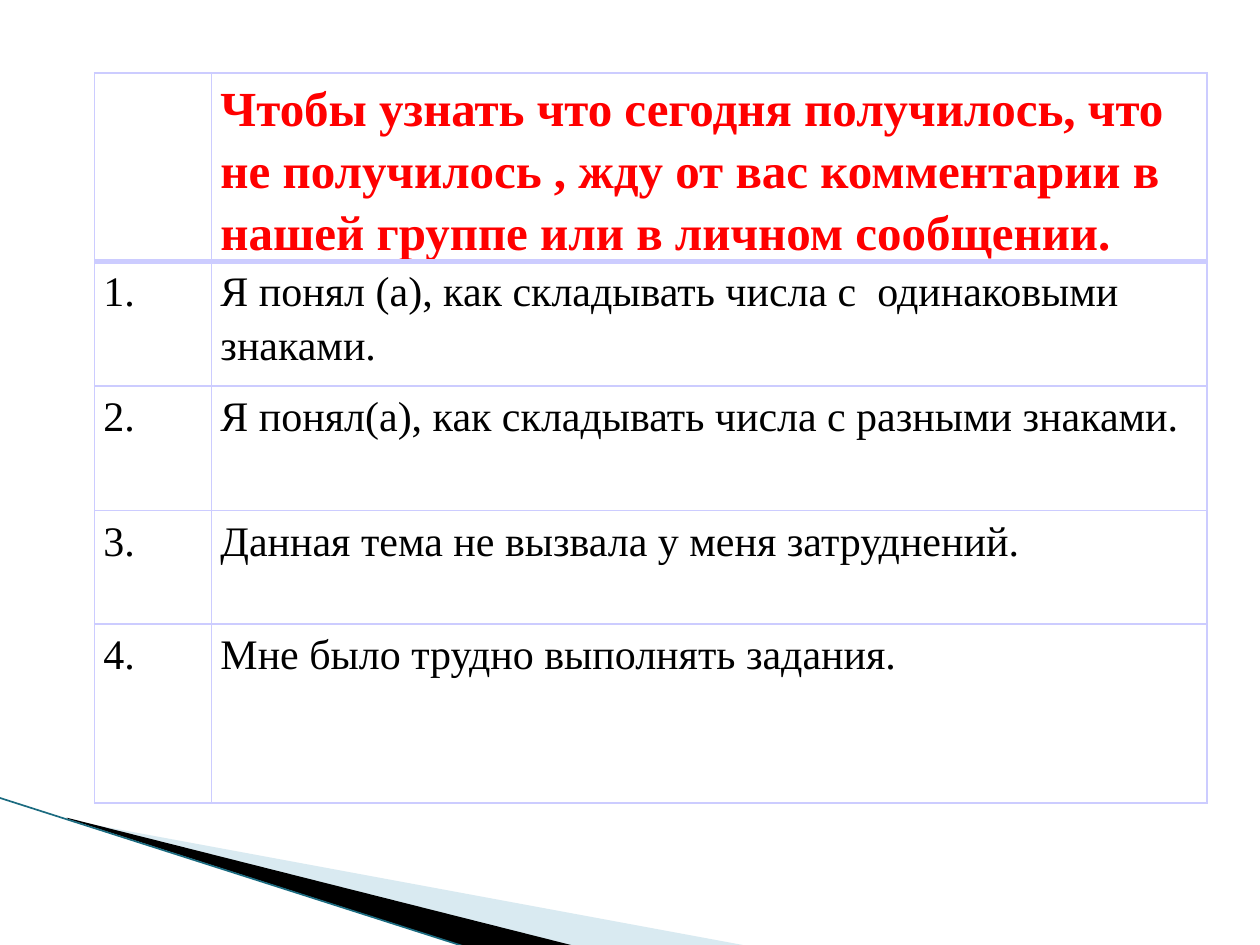
from dataclasses import dataclass

from lxml import etree
from pptx import Presentation
from pptx.dml.color import RGBColor
from pptx.enum.text import MSO_ANCHOR, PP_ALIGN
from pptx.enum.shapes import MSO_CONNECTOR
from pptx.oxml.ns import qn
from pptx.util import Inches, Pt

LEFT = PP_ALIGN.LEFT
TOP = MSO_ANCHOR.TOP
STRAIGHT = MSO_CONNECTOR.STRAIGHT


@dataclass(frozen=True)
class Theme:
    font: str = "Times New Roman"
    heading_size: float = 28
    body_size: float = 24
    heading: str = "FF0000"
    ink: str = "000000"
    grid: str = "CCCCFF"
    pale_wedge: str = "A0CBDC"
    edge: str = "1B6B80"
    thin: float = 1
    thick: float = 3


PALE_WEDGE = [(0.55, 6.51), (5.95, 7.51), (4.56, 7.51), (0.55, 6.5)]
DARK_WEDGE = [(0.53, 6.49), (4.57, 7.51), (3.72, 7.52), (0.54, 6.5)]
COL_WIDTHS = [0.93, 7.9]
ROW_HEIGHTS = [1.49, 0.99, 0.99, 0.9, 1.42]
HEADING = ("Чтобы узнать что сегодня получилось, что не получилось , "
           "жду от вас комментарии в нашей группе или в личном сообщении.")
STATEMENTS = [
    "Я понял (а), как складывать числа с  одинаковыми знаками.",
    "Я понял(а), как складывать числа с разными знаками.",
    "Данная тема не вызвала у меня затруднений.",
    "Мне было трудно выполнять задания.",
]


def set_attrs(obj, values):
    for name, value in values.items():
        setattr(obj, name, value)


class SlideBuilder:
    def __init__(self, slide, theme):
        self.shapes = slide.shapes
        self.theme = theme

    def wedge(self, points, color, opacity=100):
        start, *rest = [(Inches(x), Inches(y)) for x, y in points]
        builder = self.shapes.build_freeform(*start)
        builder.add_line_segments(rest, close=True)
        sp = builder.convert_to_shape()
        sp.shadow.inherit = False
        sp.fill.solid()
        sp.fill.fore_color.rgb = RGBColor.from_string(color)
        sp.line.fill.background()
        if opacity < 100:
            clr = sp._element.spPr.find(".//" + qn("a:srgbClr"))
            etree.SubElement(clr, qn("a:alpha"), val=str(opacity * 1000))

    def line(self, start, end, color, width):
        ends = [Inches(v) for v in (*start, *end)]
        cxn = self.shapes.add_connector(STRAIGHT, *ends)
        cxn.line.color.rgb = RGBColor.from_string(color)
        cxn.line.width = Pt(width)
        etree.SubElement(cxn._element.spPr, qn("a:effectLst"))

    def borders(self, cell, widths):
        """Add left, right, top and bottom borders, ahead of the cell's fill."""
        tc_pr = cell._tc.get_or_add_tcPr()
        for i, (side, width) in enumerate(zip("LRTB", widths)):
            ln = etree.Element(qn(f"a:ln{side}"), w=str(Pt(width)))
            fill = etree.SubElement(ln, qn("a:solidFill"))
            etree.SubElement(fill, qn("a:srgbClr"), val=self.theme.grid)
            tc_pr.insert(i, ln)

    def cell_text(self, cell, text, size, color, bold):
        p = cell.text_frame.paragraphs[0]
        set_attrs(p, {"alignment": LEFT, "line_spacing": 1.15,
                      "space_after": Pt(10)})
        r = p.add_run()
        r.text = text
        set_attrs(r.font, {"name": self.theme.font, "size": Pt(size),
                           "bold": bold})
        r.font.color.rgb = RGBColor.from_string(color)

    def table(self, left, top, col_widths, row_heights, rows):
        t = self.theme
        size = (Inches(sum(col_widths)), Inches(sum(row_heights)))
        tbl = self.shapes.add_table(len(rows), len(col_widths), Inches(left),
                                    Inches(top), *size).table
        set_attrs(tbl, {"first_row": False, "horz_banding": False})
        for col, width in zip(tbl.columns, col_widths):
            col.width = Inches(width)
        for i, (height, texts) in enumerate(zip(row_heights, rows)):
            tbl.rows[i].height = Inches(height)
            style = ((t.heading_size, t.heading, True) if i == 0
                     else (t.body_size, t.ink, False))
            above = t.thick if i == 1 else t.thin
            below = t.thick if i == 0 else t.thin
            for j, text in enumerate(texts):
                cell = tbl.cell(i, j)
                set_attrs(cell, {"margin_left": Inches(0.07),
                                 "margin_right": Inches(0.07),
                                 "margin_top": Inches(0.01),
                                 "margin_bottom": 0,
                                 "vertical_anchor": TOP})
                cell.fill.background()
                self.borders(cell, (t.thin, t.thin, above, below))
                if text:
                    self.cell_text(cell, text, *style)


def main():
    prs = Presentation()
    set_attrs(prs, {"slide_width": Inches(10), "slide_height": Inches(7.5)})
    theme = Theme()
    s = SlideBuilder(prs.slides.add_slide(prs.slide_layouts[6]), theme)

    s.wedge(PALE_WEDGE, theme.pale_wedge, opacity=40)
    s.wedge(DARK_WEDGE, theme.ink)
    s.line((-0.01, 6.33), (3.71, 7.52), theme.edge, 0.95)

    numbered = [(f"{n}.", text) for n, text in enumerate(STATEMENTS, 1)]
    s.table(0.75, 0.58, COL_WIDTHS, ROW_HEIGHTS, [("", HEADING), *numbered])
    prs.save("out.pptx")


if __name__ == "__main__":
    main()
